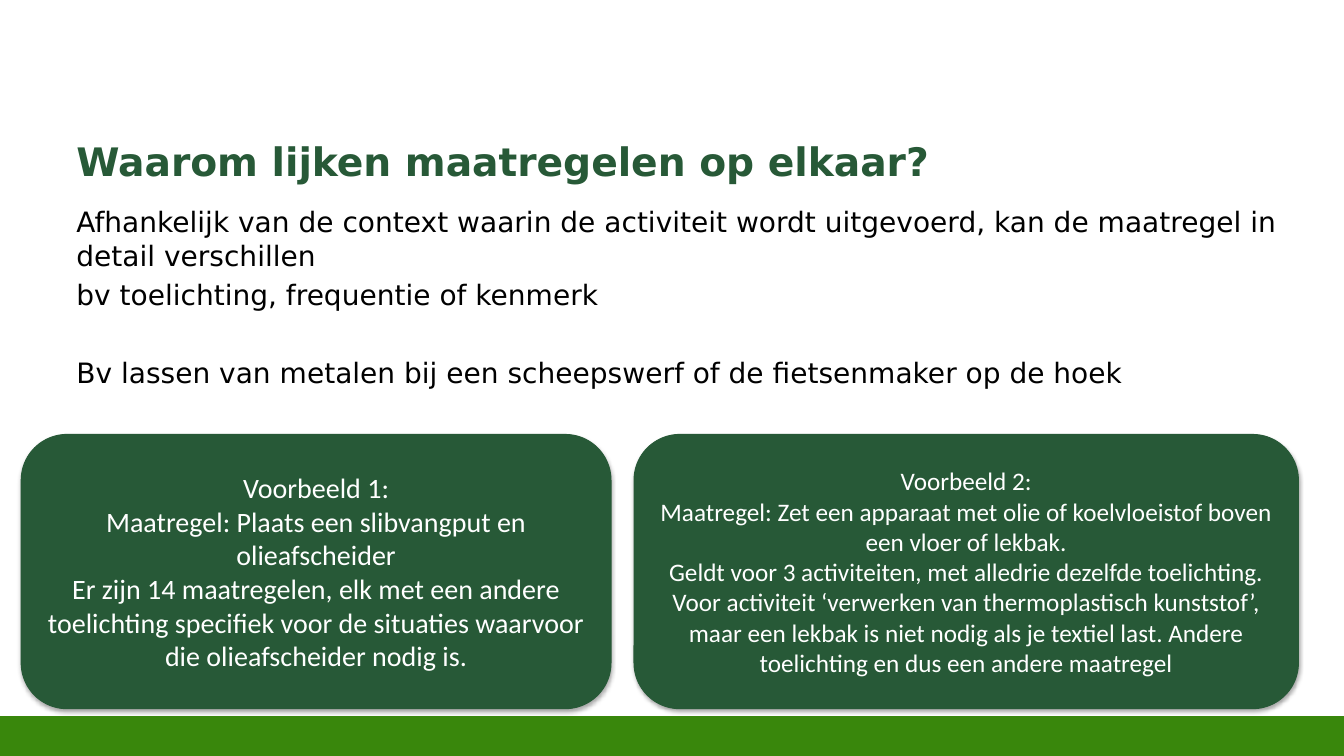
import pptx
import pptx.dml.color
import pptx.enum.shapes
import pptx.enum.text
import pptx.oxml
import pptx.oxml.ns
import pptx.util

COLORS = {"forest": "275937", "grass": "39870C", "black": "000000", "white": "FFFFFF"}

# Grid of 100 columns by 100 rows
SLIDE_WIDTH, SLIDE_HEIGHT = pptx.util.Inches(13.33), pptx.util.Inches(7.5)
MARGIN = 4.95
FOOTER_TOP = 94.9
CARD_TOP, CARD_ROWS = 57.47, 36.27

INTRO = [
    ("Afhankelijk van de context waarin de activiteit wordt uitgevoerd, "
     "kan de maatregel in detail verschillen", 0),
    ("bv toelichting, frequentie of kenmerk", 4),
    ("Bv lassen van metalen bij een scheepswerf of de fietsenmaker op de hoek", 32),
]

# Left column, column count, text size, lines
EXAMPLES = [
    (1.58, 43.88, 20, [
        "Voorbeeld 1:",
        "Maatregel: Plaats een slibvangput en olieafscheider",
        "Er zijn 14 maatregelen, elk met een andere toelichting specifiek "
        "voor de situaties waarvoor die olieafscheider nodig is.",
    ]),
    (47.18, 49.43, 18, [
        "Voorbeeld 2:",
        "Maatregel: Zet een apparaat met olie of koelvloeistof boven een vloer of lekbak.",
        "Geldt voor 3 activiteiten, met alledrie dezelfde toelichting.",
        "Voor activiteit ‘verwerken van thermoplastisch kunststof’, maar een lekbak "
        "is niet nodig als je textiel last. Andere toelichting en dus een andere maatregel",
    ]),
]


def area(left, top, columns, rows):
    return (int(SLIDE_WIDTH * left / 100), int(SLIDE_HEIGHT * top / 100),
            int(SLIDE_WIDTH * columns / 100), int(SLIDE_HEIGHT * rows / 100))


def rgb(color):
    return pptx.dml.color.RGBColor.from_string(COLORS[color])


def write_lines(frame, lines, font, size, color):
    frame.word_wrap = True
    frame.text = "\n".join(lines)
    for paragraph in frame.paragraphs:
        paragraph.font.name = font
        paragraph.font.size = pptx.util.Pt(size)
        paragraph.font.color.rgb = rgb(color)
    return frame.paragraphs


def add_panel(slide, kind, place, color, line_width):
    panel = slide.shapes.add_shape(kind, *place)
    panel.shadow.inherit = False
    panel.fill.solid()
    panel.fill.fore_color.rgb = rgb(color)
    panel.line.color.rgb = rgb(color)
    panel.line.width = pptx.util.Pt(line_width)
    return panel


def add_soft_shadow(panel):
    effects = panel._element.spPr.find(pptx.oxml.ns.qn("a:effectLst"))
    effects.append(pptx.oxml.parse_xml(
        f'<a:outerShdw {pptx.oxml.ns.nsdecls("a")} blurRad="{pptx.util.Pt(3.1)}" '
        f'dist="{pptx.util.Pt(1.8)}" dir="5400000" rotWithShape="0">'
        f'<a:srgbClr val="{COLORS["black"]}"><a:alpha val="35000"/></a:srgbClr>'
        '</a:outerShdw>'))


def add_title(slide, text):
    frame = slide.shapes.add_textbox(*area(MARGIN, 17.07, 90, 9.73)).text_frame
    frame.vertical_anchor = pptx.enum.text.MSO_ANCHOR.MIDDLE
    frame.margin_bottom = pptx.util.Inches(0.15)
    write_lines(frame, [text], "DejaVu Sans", 28, "forest")[0].font.bold = True


def add_intro(slide):
    top = 26.4
    frame = slide.shapes.add_textbox(*area(MARGIN, top, 93.4, FOOTER_TOP - top)).text_frame
    paragraphs = write_lines(frame, [text for text, _ in INTRO], "DejaVu Sans", 20, "black")
    for paragraph, (_, gap) in zip(paragraphs, INTRO):
        paragraph.line_spacing = pptx.util.Pt(24)
        paragraph.space_before = pptx.util.Pt(gap)


def add_example(slide, left, columns, size, lines):
    card = add_panel(slide, pptx.enum.shapes.MSO_SHAPE.ROUNDED_RECTANGLE,
                     area(left, CARD_TOP, columns, CARD_ROWS), "forest", 0.75)
    add_soft_shadow(card)
    card.text_frame.vertical_anchor = pptx.enum.text.MSO_ANCHOR.MIDDLE
    for paragraph in write_lines(card.text_frame, lines, "Calibri", size, "white"):
        paragraph.alignment = pptx.enum.text.PP_ALIGN.CENTER


def main():
    deck = pptx.Presentation()
    deck.slide_width, deck.slide_height = SLIDE_WIDTH, SLIDE_HEIGHT
    slide = deck.slides.add_slide(deck.slide_layouts[6])

    # Footer band
    add_panel(slide, pptx.enum.shapes.MSO_SHAPE.RECTANGLE,
              area(0, FOOTER_TOP, 100, 100 - FOOTER_TOP), "grass", 2)

    # Heading and explanation
    add_title(slide, "Waarom lijken maatregelen op elkaar?")
    add_intro(slide)

    # Example cards
    for example in EXAMPLES:
        add_example(slide, *example)

    deck.save("out.pptx")


if __name__ == "__main__":
    main()
